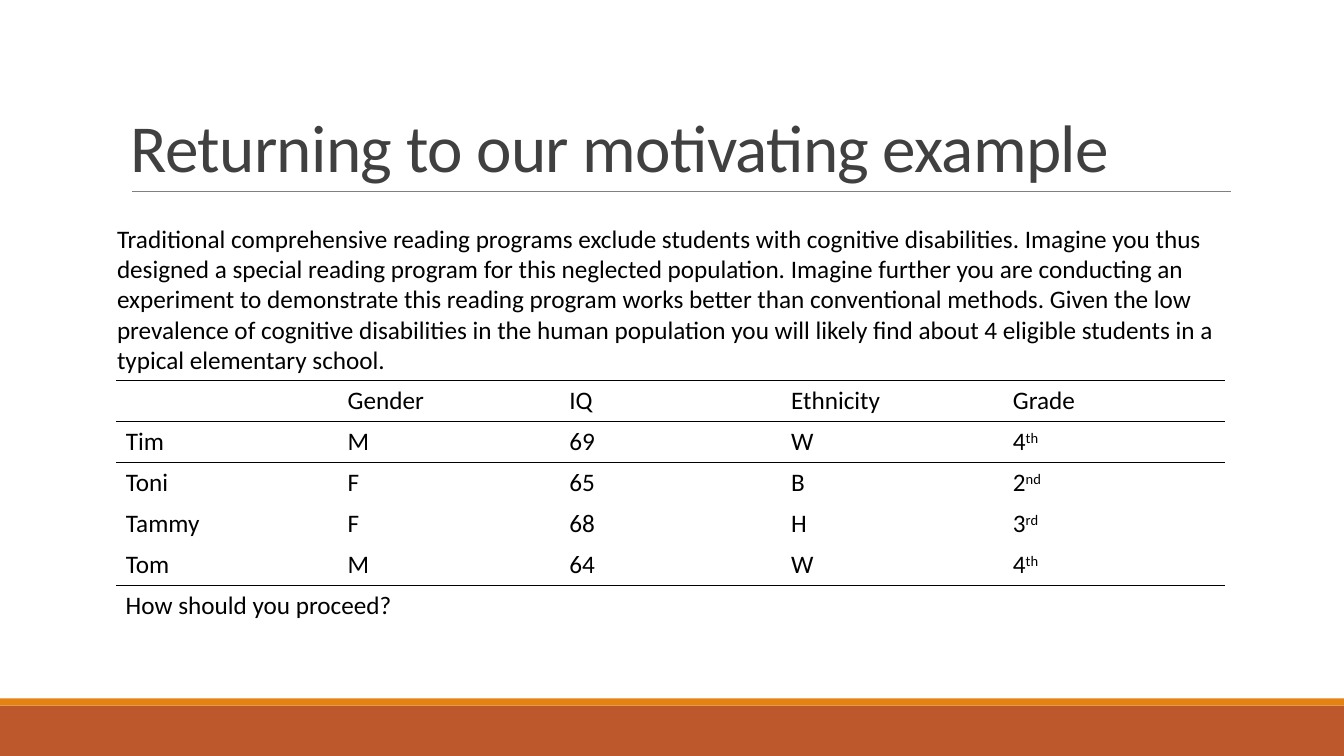
from lxml.etree import SubElement
from pptx import Presentation
from pptx.dml.color import RGBColor
from pptx.enum.shapes import MSO_CONNECTOR as Conn, MSO_SHAPE as Kind
from pptx.enum.text import MSO_ANCHOR as Anchor
from pptx.oxml import parse_xml
from pptx.oxml.ns import nsdecls, qn
from pptx.util import Cm, Pt


def color(code):
    return RGBColor.from_string(code)


def style(para, size=18, code="000000"):
    para.font.name = "Calibri"
    para.font.size = Pt(size)
    para.font.color.rgb = color(code)


deck = Presentation()
deck.slide_width = Cm(33.87)
deck.slide_height = Cm(19.05)
slide = deck.slides.add_slide(deck.slide_layouts[6])
shapes = slide.shapes

for top, high, code in [(17.78, 1.27, "BD582C"), (17.6, 0.18, "E48312")]:
    bar = shapes.add_shape(Kind.RECTANGLE, Cm(0), Cm(top), deck.slide_width, Cm(high))
    bar.shadow.inherit = False
    bar.fill.solid()
    bar.fill.fore_color.rgb = color(code)
    bar.line.fill.background()

rule = shapes.add_connector(Conn.STRAIGHT, Cm(3.33), Cm(4.82), Cm(31.01), Cm(4.82))
rule.line.color.rgb = color("808080")
rule.line.width = Pt(0.5)
SubElement(rule._element.spPr, qn("a:effectLst"))

title = "Returning to our motivating example"
story = (
    "Traditional comprehensive reading programs exclude students with cognitive "
    "disabilities. Imagine you thus designed a special reading program for this "
    "neglected population. Imagine further you are conducting an experiment to "
    "demonstrate this reading program works better than conventional methods. "
    "Given the low prevalence of cognitive disabilities in the human population "
    "you will likely find about 4 eligible students in a typical elementary school."
)
ask = "How should you proceed?"

texts = [
    (title, 3.05, 0.79, 27.94, 4.04, 48, "404040"),
    (story, 2.7, 5.5, 28.3, 4.11, 18, "000000"),
    (ask, 2.92, 14.73, 9.65, 1.03, 18, "000000"),
]
for text, left, top, wide, high, size, code in texts:
    frame = shapes.add_textbox(Cm(left), Cm(top), Cm(wide), Cm(high)).text_frame
    frame.word_wrap = True
    para = frame.paragraphs[0]
    para.text = text
    style(para, size, code)
    if text == title:
        frame.vertical_anchor = Anchor.BOTTOM
        para.line_spacing = 0.85
        para.runs[0]._r.get_or_add_rPr().set("spc", "-50")

rows = [
    ["", "Gender", "IQ", "Ethnicity", "Grade"],
    ["Tim", "M", "69", "W", "4th"],
    ["Toni", "F", "65", "B", "2nd"],
    ["Tammy", "F", "68", "H", "3rd"],
    ["Tom", "M", "64", "W", "4th"],
]
ruled = {0, 1, 2, 5}
grid = shapes.add_table(5, 5, Cm(2.92), Cm(9.59), Cm(27.94), Cm(5.17)).table
grid.first_row = False
grid.horz_banding = False

for r, row in enumerate(rows):
    for c, text in enumerate(row):
        cell = grid.cell(r, c)
        cell.fill.background()
        para = cell.text_frame.paragraphs[0]
        style(para)
        if r and c == 4:
            para.add_run().text = text[:1]
            end = para.add_run()
            end.text = text[1:]
            end._r.get_or_add_rPr().set("baseline", "30000")
        elif text:
            para.add_run().text = text
        props = cell._tc.get_or_add_tcPr()
        for i, side in enumerate("LRTB"):
            edge = {"T": r, "B": r + 1}.get(side)
            ink = "<a:noFill/>"
            if edge in ruled:
                ink = '<a:solidFill><a:srgbClr val="000000"/></a:solidFill>'
            line = f'<a:ln{side} {nsdecls("a")} w="12700">{ink}</a:ln{side}>'
            props.insert(i, parse_xml(line))

deck.save("out.pptx")
